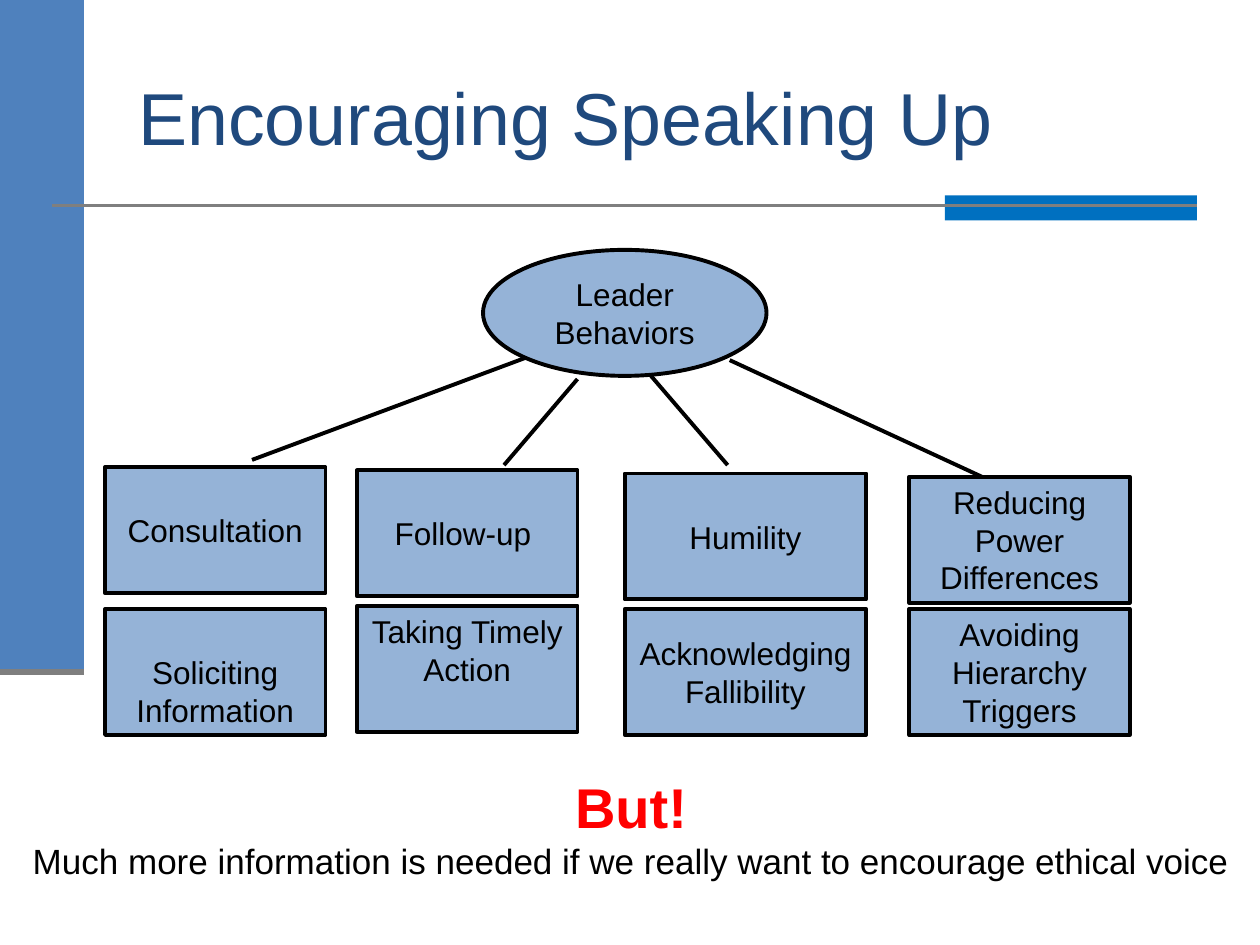
from lxml import etree
from pptx import Presentation
from pptx import util as u
from pptx.dml.color import RGBColor
from pptx.enum import shapes, text
from pptx.oxml.ns import qn

COLORS = {
    "band": "4F81BD", "accent": "0070C0", "rule": "7F7F7F", "title": "1F497D",
    "node": "95B3D7", "ink": "000000", "alert": "FF0000",
}
COLUMNS, ROWS = 120, 90
TOP, MIDDLE, BOTTOM = (text.MSO_ANCHOR.TOP, text.MSO_ANCHOR.MIDDLE,
                       text.MSO_ANCHOR.BOTTOM)
LEFT, CENTER = text.PP_ALIGN.LEFT, text.PP_ALIGN.CENTER


class Board:
    font = "Arial"
    outline = 2.25

    def __init__(self):
        self.deck = Presentation()
        self.deck.slide_width, self.deck.slide_height = u.Inches(10), u.Inches(7.5)
        self.slide = self.deck.slides.add_slide(self.deck.slide_layouts[6])

    def color(self, name):
        return RGBColor.from_string(COLORS[name])

    def grid(self, *lengths):
        units = self.deck.slide_width / COLUMNS, self.deck.slide_height / ROWS
        return [round(length * units[i % 2]) for i, length in enumerate(lengths)]

    def block(self, place, fill, kind=shapes.MSO_SHAPE.RECTANGLE, outlined=False):
        shape = self.slide.shapes.add_shape(kind, *self.grid(*place))
        shape.shadow.inherit = False
        shape.fill.solid()
        shape.fill.fore_color.rgb = self.color(fill)
        if outlined:
            shape.line.color.rgb = self.color("ink")
            shape.line.width = u.Pt(self.outline)
        else:
            shape.line.fill.background()
        return shape

    def node(self, place, lines, anchor=MIDDLE, kind=shapes.MSO_SHAPE.RECTANGLE):
        shape = self.block(place, "node", kind, outlined=True)
        self.add_lines(shape.text_frame, [(line, 18, "ink", False) for line in lines],
                       anchor, CENTER)

    def line(self, ends, color="ink", width=outline):
        link = self.slide.shapes.add_connector(
            shapes.MSO_CONNECTOR.STRAIGHT, *self.grid(*ends))
        link.line.color.rgb = self.color(color)
        link.line.width = u.Pt(width)
        etree.SubElement(link._element.spPr, qn("a:effectLst"))

    def label(self, place, lines, anchor=TOP, align=LEFT, wrap=True):
        box = self.slide.shapes.add_textbox(*self.grid(*place))
        self.add_lines(box.text_frame, lines, anchor, align, wrap)

    def add_lines(self, frame, lines, anchor, align, wrap=True):
        frame.word_wrap = wrap
        frame.vertical_anchor = anchor
        for i, (words, size, color, bold) in enumerate(lines):
            paragraph = frame.add_paragraph() if i else frame.paragraphs[0]
            paragraph.alignment = align
            run = paragraph.add_run()
            run.text = words
            run.font.name, run.font.size, run.font.bold = self.font, u.Pt(size), bold
            run.font.color.rgb = self.color(color)


def main():
    board = Board()
    board.block((0, 0, 8, 64), "band")
    board.block((90, 18.6, 24, 2.4), "accent")
    board.line((5, 19.6, 114, 19.6), "rule", 1.5)
    board.line((0, 64, 8, 64), "rule", 3.5)
    board.label((12, 3.6, 102, 15),
                [("Encouraging Speaking Up", 42, "title", False)], MIDDLE)

    board.node((46, 23.8, 27, 12), ["Leader Behaviors"],
               kind=shapes.MSO_SHAPE.OVAL)

    behaviors = [
        (10, 21, 44.5, ["Consultation"], MIDDLE,
         58, ["Soliciting Information"], BOTTOM),
        (34, 21, 44.8, ["Follow-up "], MIDDLE,
         57.7, ["Taking Timely Action"], TOP),
        (59.5, 23, 45.1, ["Humility"], MIDDLE,
         58, ["Acknowledging Fallibility"], MIDDLE),
        (86.6, 21, 45.4, ["Reducing Power", "Differences"], TOP,
         58, ["Avoiding Hierarchy Triggers"], TOP),
    ]
    for left, width, top, name, anchor, detail_top, detail, detail_anchor in behaviors:
        board.node((left, top, width, 12), name, anchor)
        board.node((left, detail_top, width, 12), detail, detail_anchor)

    branches = [
        (50, 34.1, 24, 43.8), (55, 36.1, 48, 44.3),
        (62, 35.8, 69.3, 44.3), (69.5, 34.3, 93.5, 45.4),
    ]
    for branch in branches:
        board.line(branch)

    board.label((1, 73, 118.2, 11.8), [
        ("But!", 32, "alert", True),
        ("Much more information is needed if we really want to encourage ethical voice",
         20, "ink", False),
    ], align=CENTER, wrap=False)

    board.deck.save("out.pptx")


if __name__ == "__main__":
    main()
